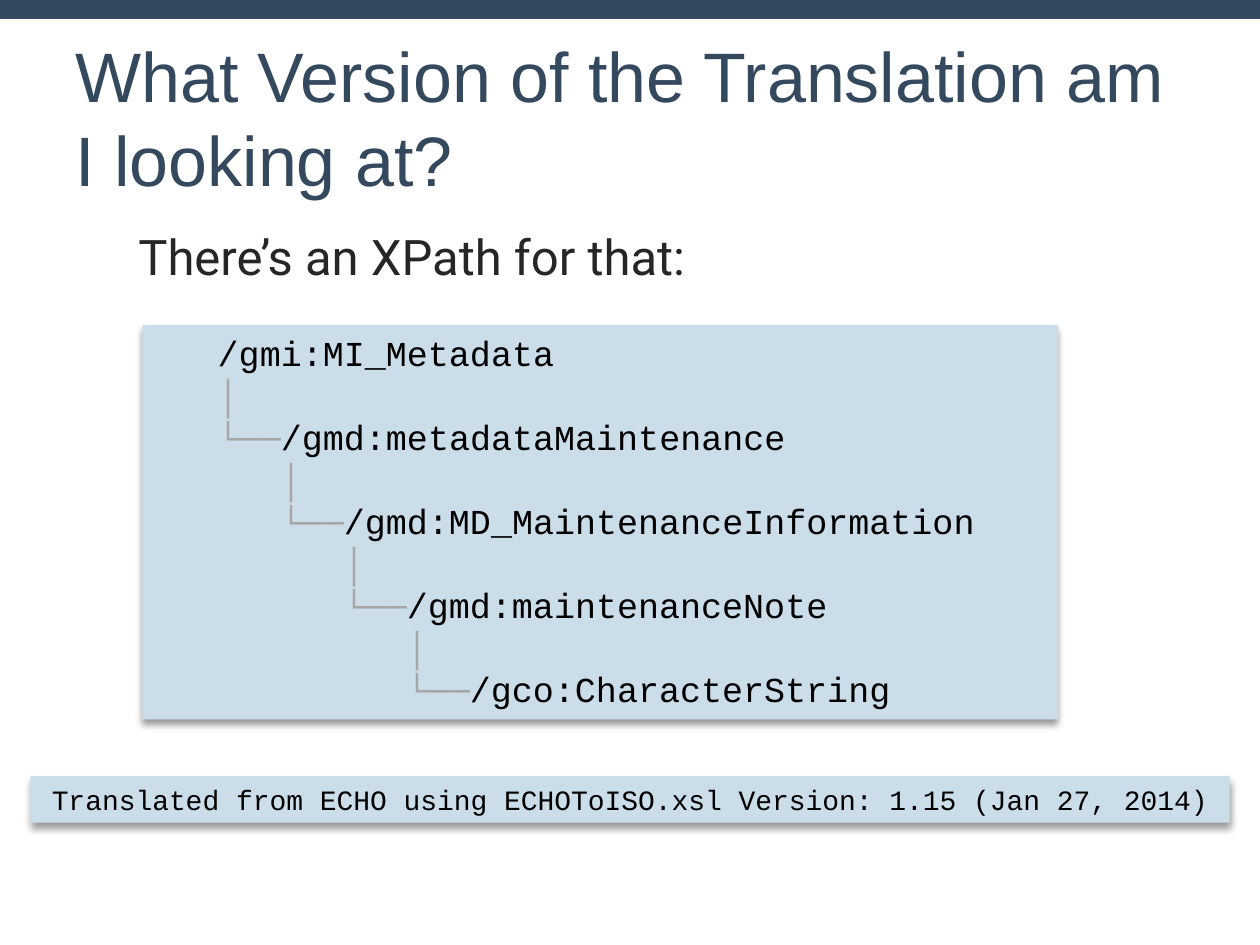
"""Build the slide on finding the translation version with an XPath."""
from lxml import etree
from pptx import Presentation
from pptx.dml.color import RGBColor
from pptx.enum.shapes import MSO_SHAPE
from pptx.enum.text import MSO_ANCHOR, PP_ALIGN
from pptx.oxml import parse_xml
from pptx.oxml.ns import nsdecls, qn
from pptx.util import Inches, Pt

RECT = MSO_SHAPE.RECTANGLE
TOP, MIDDLE = MSO_ANCHOR.TOP, MSO_ANCHOR.MIDDLE
LEFT, CENTER = PP_ALIGN.LEFT, PP_ALIGN.CENTER
NAVY = RGBColor(0x34, 0x49, 0x5E)
PALE_BLUE = RGBColor(0xCC, 0xDD, 0xEA)
DARK = RGBColor(0x26, 0x26, 0x26)
BLACK = RGBColor(0, 0, 0)
GRAY = RGBColor(0xA6, 0xA6, 0xA6)
MONO = "Courier New"
SHADOW = (
    f'<a:outerShdw {nsdecls("a")} blurRad="{Pt(4)}" dist="{Pt(3)}" dir="5400000" '
    'rotWithShape="0"><a:srgbClr val="000000"><a:alpha val="40000"/></a:srgbClr></a:outerShdw>'
)
STEPS = [
    "/gmi:MI_Metadata",
    "/gmd:metadataMaintenance",
    "/gmd:MD_MaintenanceInformation",
    "/gmd:maintenanceNote",
    "/gco:CharacterString",
]


def add_panel(left, top, width, height, color, shadow=True):
    sp = s.shapes.add_shape(RECT, Inches(left), Inches(top), Inches(width), Inches(height))
    sp.shadow.inherit = False
    sp.fill.solid()
    sp.fill.fore_color.rgb = color
    sp.line.fill.background()
    if shadow:
        sp._element.spPr.find(qn("a:effectLst")).append(parse_xml(SHADOW))
    return sp.text_frame


def add_line(tf, runs, size, font, align=LEFT, indent=0):
    p = tf.paragraphs[0] if not tf.paragraphs[0].runs else tf.add_paragraph()
    p.alignment = align
    if indent:
        pPr = p._p.get_or_add_pPr()
        pPr.set("marL", str(Inches(indent)))
        pPr.set("indent", "0")
    p.font.size = Pt(size)
    p.font.name = font
    for text, color in runs:
        r = p.add_run()
        r.text = text
        r.font.color.rgb = color


prs = Presentation()
prs.slide_width, prs.slide_height = Inches(10), Inches(7.5)
s = prs.slides.add_slide(prs.slide_layouts[6])

add_panel(0, 0, 10, 0.15, NAVY, shadow=False)

for text, top, height, anchor, size, font, color, indent in [
    ("What Version of the Translation am I looking at?", 0.3, 1.25, MIDDLE, 40, "Arial", NAVY, 0),
    ("There’s an XPath for that:", 1.75, 0.6, TOP, 28, "Roboto", DARK, 0.5),
]:
    tf = s.shapes.add_textbox(Inches(0.5), Inches(top), Inches(9), Inches(height)).text_frame
    tf.word_wrap = True
    tf.vertical_anchor = anchor
    add_line(tf, [(text, color)], size, font, indent=indent)

tf = add_panel(1.13, 2.58, 7.27, 3.13, PALE_BLUE)
tf.vertical_anchor = TOP
for level, step in enumerate(STEPS):
    indent = 0.5 * max(level, 1)
    if level:
        add_line(tf, [("│", GRAY)], 20, MONO, indent=indent)
        add_line(tf, [("└──", GRAY), (step, BLACK)], 20, MONO, indent=indent)
    else:
        add_line(tf, [(step, BLACK)], 20, MONO, indent=indent)

tf = add_panel(0.24, 6.16, 9.52, 0.37, PALE_BLUE)
tf.word_wrap = False
version = "Translated from ECHO using ECHOToISO.xsl Version: 1.15 (Jan 27, 2014)"
add_line(tf, [(version, BLACK)], 16, MONO, CENTER)

prs.save("out.pptx")
